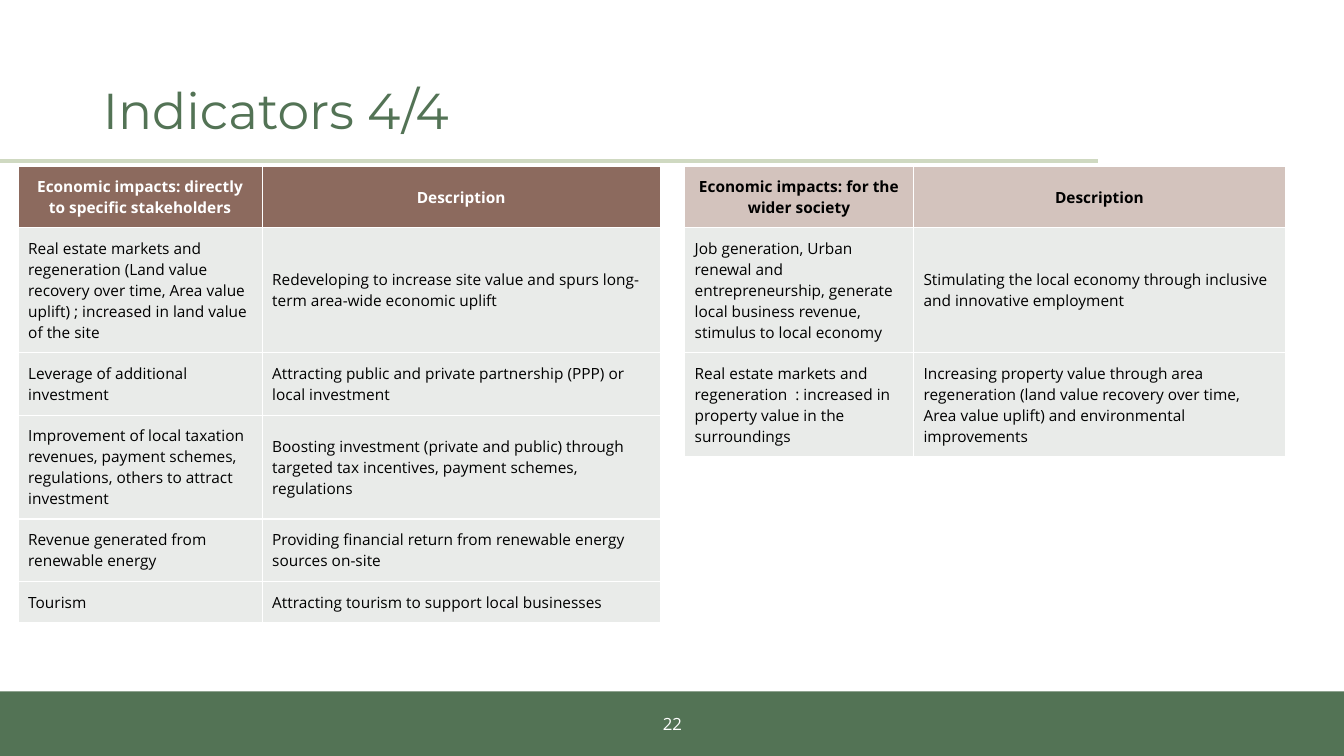
from dataclasses import dataclass

from lxml.etree import SubElement
from pptx import Presentation
from pptx.dml.color import RGBColor
from pptx.enum.shapes import MSO_CONNECTOR, MSO_SHAPE
from pptx.enum.text import MSO_ANCHOR, MSO_AUTO_SIZE, PP_ALIGN
from pptx.oxml.ns import qn
from pptx.util import Inches, Pt


@dataclass(frozen=True)
class Theme:
    green: str = "537355"
    rule: str = "CFD9C1"
    brown: str = "8C6A5E"
    blush: str = "D3C3BD"
    cell: str = "E9EBE9"
    white: str = "FFFFFF"
    black: str = "000000"
    heading_font: str = "Montserrat"
    body_font: str = "Open Sans"
    title_size: int = 36
    number_size: int = 12
    table_size: int = 11


STAKEHOLDER_ROWS = [
    ("Economic impacts: directly to specific stakeholders", "Description"),
    ("Real estate markets and regeneration (Land value recovery over time, "
     "Area value uplift) ; increased in land value of the site",
     "Redeveloping to increase site value and spurs long-term area-wide economic uplift"),
    ("Leverage of additional investment",
     "Attracting public and private partnership (PPP) or local investment"),
    ("Improvement of local taxation revenues, payment schemes, regulations, "
     "others to attract investment",
     "Boosting investment (private and public) through targeted tax incentives, "
     "payment schemes, regulations"),
    ("Revenue generated from renewable energy",
     "Providing financial return from renewable energy sources on-site"),
    ("Tourism", "Attracting tourism to support local businesses"),
]
SOCIETY_ROWS = [
    ("Economic impacts: for the wider society", "Description"),
    ("Job generation, Urban renewal and entrepreneurship, generate local business "
     "revenue, stimulus to local economy",
     "Stimulating the local economy through inclusive and innovative employment"),
    ("Real estate markets and regeneration  : increased in property value in the surroundings",
     "Increasing property value through area regeneration (land value recovery over time, "
     "Area value uplift) and environmental improvements"),
]


class SlideBuilder:
    def __init__(self, prs, theme):
        self.theme = theme
        self.s = prs.slides.add_slide(prs.slide_layouts[5])

    def style(self, p, size, color, font=None, bold=False, align=PP_ALIGN.LEFT):
        p.alignment = align
        p.font.name = font or self.theme.body_font
        p.font.size = Pt(size)
        p.font.bold = bold
        p.font.color.rgb = RGBColor.from_string(color)

    def title(self, text, left, top, width, height):
        sp = self.s.shapes.title
        sp.left, sp.top, sp.width, sp.height = map(Inches, (left, top, width, height))
        tf = sp.text_frame
        tf.text = text
        tf.auto_size = MSO_AUTO_SIZE.NONE
        tf.vertical_anchor = MSO_ANCHOR.MIDDLE
        p = tf.paragraphs[0]
        p.line_spacing = 0.9
        self.style(p, self.theme.title_size, self.theme.green, self.theme.heading_font)

    def band(self, left, top, width, height):
        sp = self.s.shapes.add_shape(
            MSO_SHAPE.RECTANGLE, *map(Inches, (left, top, width, height)))
        sp.shadow.inherit = False
        sp.fill.solid()
        sp.fill.fore_color.rgb = RGBColor.from_string(self.theme.green)
        sp.line.fill.background()

    def page_number(self, text, left, top, width, height):
        tf = self.s.shapes.add_textbox(
            *map(Inches, (left, top, width, height))).text_frame
        tf.word_wrap = True
        tf.vertical_anchor = MSO_ANCHOR.MIDDLE
        tf.text = text
        self.style(tf.paragraphs[0], self.theme.number_size, self.theme.white,
                   align=PP_ALIGN.CENTER)

    def rule(self, x1, y1, x2, y2):
        line = self.s.shapes.add_connector(
            MSO_CONNECTOR.STRAIGHT, *map(Inches, (x1, y1, x2, y2)))
        line.line.color.rgb = RGBColor.from_string(self.theme.rule)
        line.line.width = Pt(3)
        SubElement(line._element.spPr, qn("a:effectLst"))

    def cell_borders(self, cell):
        tc_pr = cell._tc.get_or_add_tcPr()
        for side in ("a:lnL", "a:lnR", "a:lnT", "a:lnB"):
            ln = SubElement(tc_pr, qn(side), w=str(Pt(1)))
            fill = SubElement(ln, qn("a:solidFill"))
            SubElement(fill, qn("a:srgbClr"), val=self.theme.white)

    def table(self, rows, left, top, col_widths, row_heights, header_fill, header_color):
        size = map(Inches, (left, top, sum(col_widths), sum(row_heights)))
        table = self.s.shapes.add_table(len(rows), len(col_widths), *size).table
        table.horz_banding = False
        for column, width in zip(table.columns, col_widths):
            column.width = Inches(width)
        for i, (texts, height) in enumerate(zip(rows, row_heights)):
            table.rows[i].height = Inches(height)
            header = i == 0
            for j, text in enumerate(texts):
                cell = table.cell(i, j)
                self.cell_borders(cell)
                cell.fill.solid()
                cell.fill.fore_color.rgb = RGBColor.from_string(
                    header_fill if header else self.theme.cell)
                cell.margin_left = cell.margin_right = Inches(0.1)
                cell.margin_top = cell.margin_bottom = Inches(0.1)
                cell.vertical_anchor = (
                    MSO_ANCHOR.BOTTOM if header and j == 0 else MSO_ANCHOR.MIDDLE)
                cell.text = text
                self.style(cell.text_frame.paragraphs[0], self.theme.table_size,
                           header_color if header else self.theme.black, bold=header,
                           align=PP_ALIGN.CENTER if header else PP_ALIGN.LEFT)


def main():
    prs = Presentation()
    prs.slide_width, prs.slide_height = Inches(13.33), Inches(7.5)
    theme = Theme()
    slide = SlideBuilder(prs, theme)
    slide.band(0, 6.86, 13.33, 0.64)
    slide.page_number("22", 5.17, 6.98, 3, 0.4)
    slide.rule(0, 1.6, 10.89, 1.6)
    slide.title("Indicators 4/4", 0.92, 0.4, 11.5, 1.45)
    slide.table(STAKEHOLDER_ROWS, 0.18, 1.65, (2.42, 3.95),
                (0.61, 1.24, 0.62, 1.03, 0.62, 0.41), theme.brown, theme.white)
    slide.table(SOCIETY_ROWS, 6.79, 1.65, (2.27, 3.69),
                (0.61, 1.24, 1.03), theme.blush, theme.black)
    prs.save("out.pptx")


if __name__ == "__main__":
    main()
